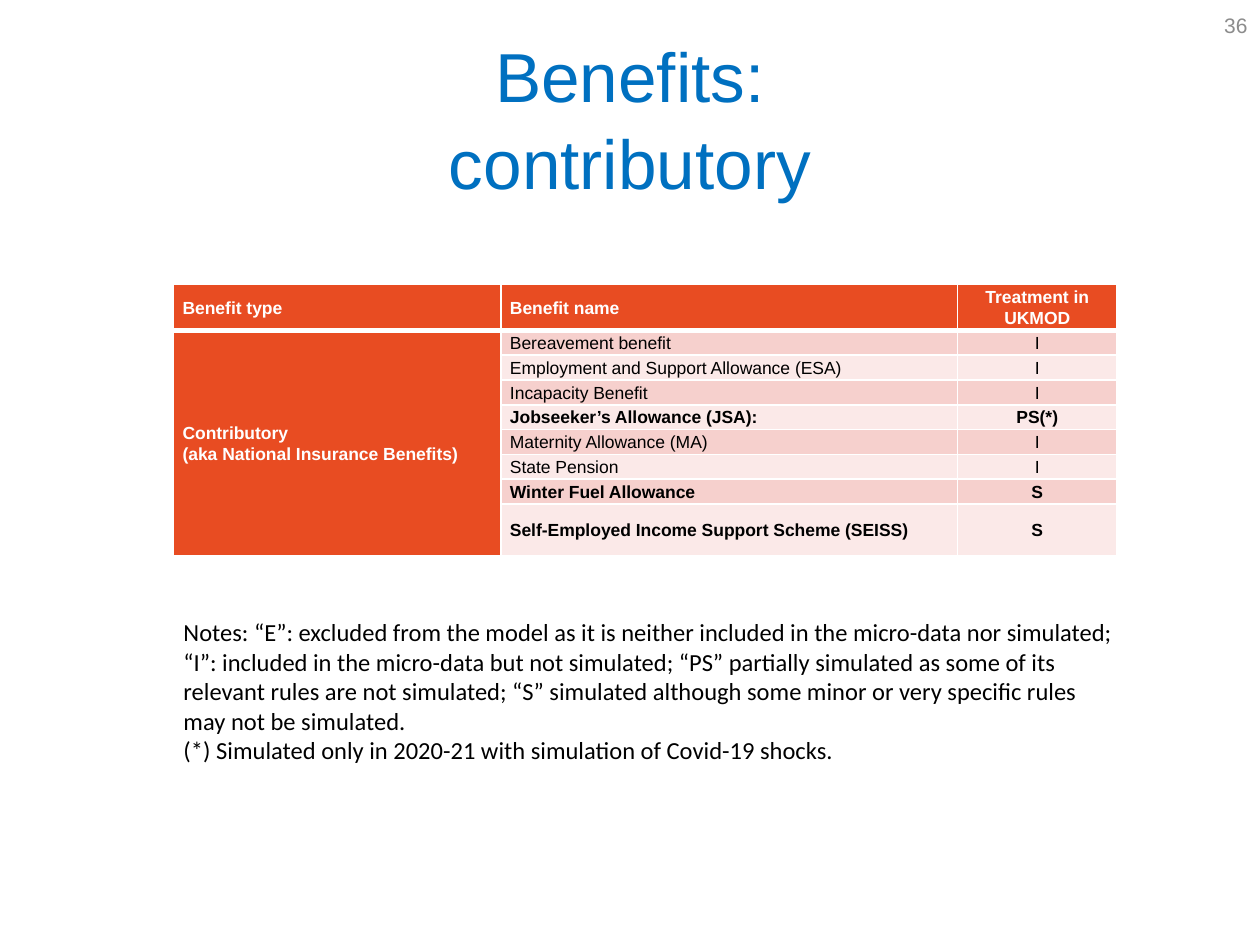
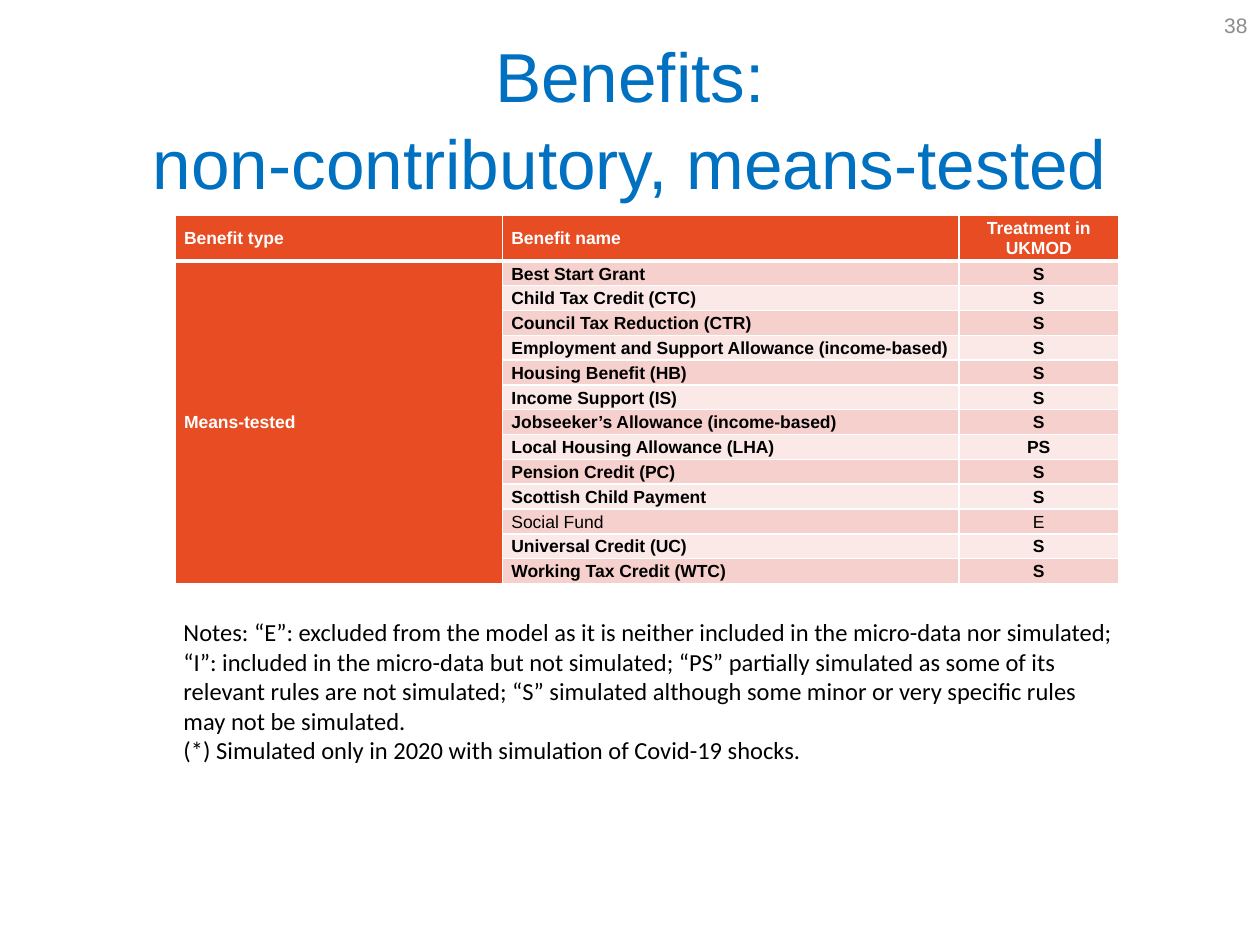
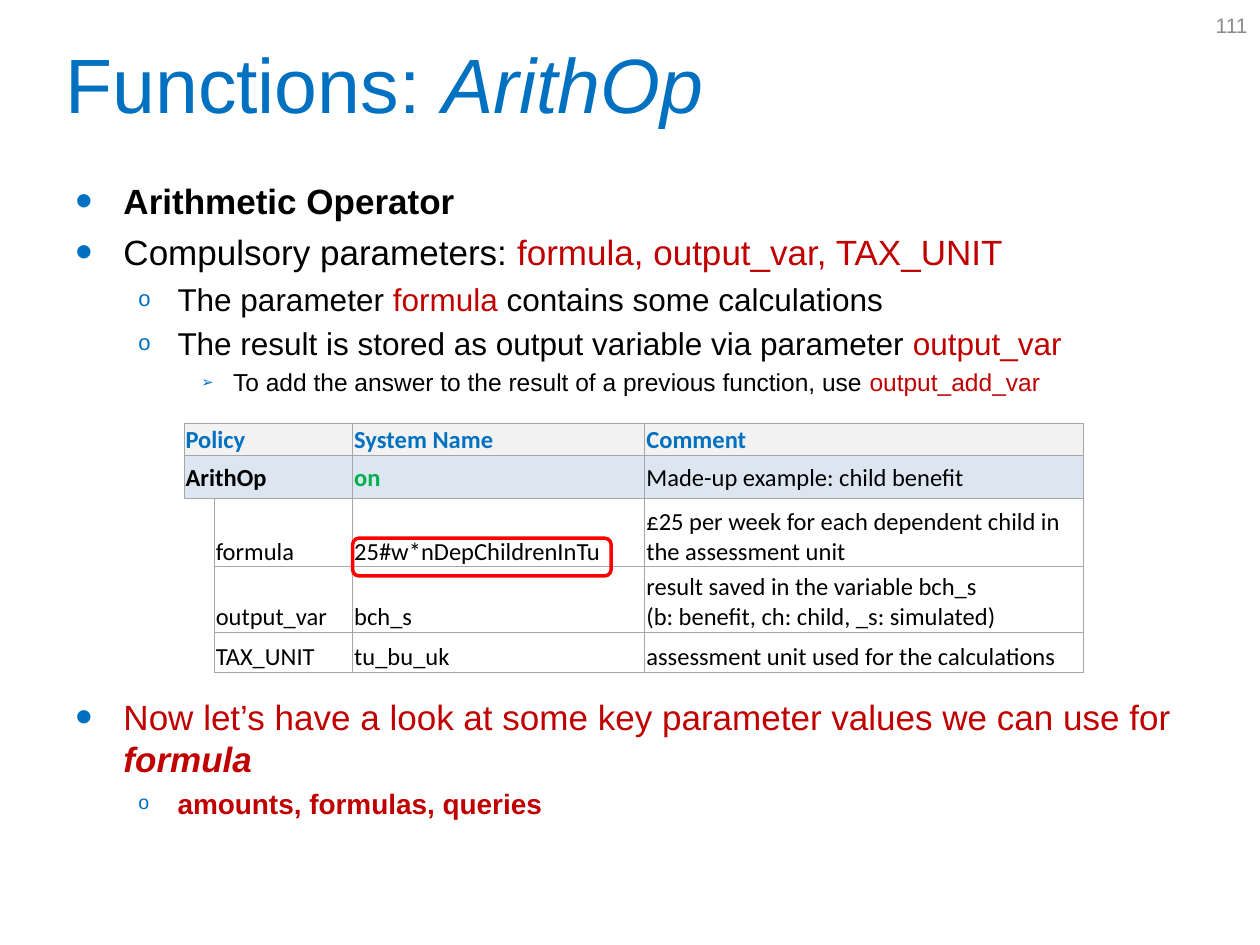
from lxml import etree
from pptx import Presentation
from pptx.dml.color import RGBColor
from pptx.enum.shapes import MSO_SHAPE
from pptx.enum.text import MSO_ANCHOR, MSO_AUTO_SIZE, PP_ALIGN
from pptx.oxml.ns import qn
from pptx.util import Cm, Pt

LEFT, CENTER, RIGHT = PP_ALIGN.LEFT, PP_ALIGN.CENTER, PP_ALIGN.RIGHT
TOP, MIDDLE, BOTTOM = MSO_ANCHOR.TOP, MSO_ANCHOR.MIDDLE, MSO_ANCHOR.BOTTOM
ROUNDED = MSO_SHAPE.ROUNDED_RECTANGLE

BLUE, BLACK, WHITE, GREY = "0070C0", "000000", "FFFFFF", "8C8C8C"
DARK_RED, RED, GREEN = "C00000", "FF0000", "00B050"
ORANGE, PINK, PALE_PINK = "E84C22", "F6D0CD", "FBE9E8"
GRID_GREY, HEADER_GREY, POLICY_BLUE = "A6A6A6", "F2F2F2", "DCE6F1"
HEADING_FONT, NOTE_FONT = "Arial", "Calibri"

# Per outline level: text indent and hanging indent in cm, bullet, bullet size in %
LEVELS = [(0.97, 0.97, "•", 140), (2.06, 0.79, "o", 70), (3.18, 0.64, "➢", 60)]

BENEFIT_HEADER = ["Benefit type", "Benefit name", "Treatment in UKMOD"]
BENEFIT_WIDTHS = [6.6, 9.2, 3.22]
BENEFIT_ROW, BENEFIT_HEADER_ROW, SEISS_ROW = 0.5, 0.93, 1.04
NOTES = (
    "Notes: “E”: excluded from the model as it is neither included in the "
    "micro-data nor simulated; “I”: included in the micro-data but not simulated; "
    "“PS” partially simulated as some of its relevant rules are not simulated; "
    "“S” simulated although some minor or very specific rules may not be simulated."
    "\n(*) Simulated only in {} with simulation of Covid-19 shocks."
)

CONTRIBUTORY = [
    ("Bereavement benefit", "I"),
    ("Employment and Support Allowance (ESA)", "I"),
    ("Incapacity Benefit", "I"),
    ("Jobseeker’s Allowance (JSA):", "PS(*)"),
    ("Maternity Allowance (MA)", "I"),
    ("State Pension", "I"),
    ("Winter Fuel Allowance", "S"),
    ("Self-Employed Income Support Scheme (SEISS)", "S"),
]
MEANS_TESTED = [
    ("Best Start Grant", "S"),
    ("Child Tax Credit (CTC)", "S"),
    ("Council Tax Reduction (CTR)", "S"),
    ("Employment and Support Allowance (income-based)", "S"),
    ("Housing Benefit (HB)", "S"),
    ("Income Support (IS)", "S"),
    ("Jobseeker’s Allowance (income-based)", "S"),
    ("Local Housing Allowance (LHA)", "PS"),
    ("Pension Credit (PC)", "S"),
    ("Scottish Child Payment", "S"),
    ("Social Fund", "E"),
    ("Universal Credit (UC)", "S"),
    ("Working Tax Credit (WTC)", "S"),
]

ARITHOP_WIDTHS = [0.61, 2.79, 5.89, 8.84]
ARITHOP_HEIGHTS = [0.66, 0.86, 1.37, 1.32, 0.81]
PARAMETERS = [
    ("formula", "25#w*nDepChildrenInTu",
     "£25 per week for each dependent child in the assessment unit"),
    ("output_var", "bch_s",
     "result saved in the variable bch_s\n(b: benefit, ch: child, _s: simulated)"),
    ("TAX_UNIT", "tu_bu_uk", "assessment unit used for the calculations"),
]

# Each point: level, size, runs of (text, colour, bold, italic)
POINTS = [
    (0, 20, [("Arithmetic Operator", BLACK, True, False)]),
    (0, 20, [("Compulsory parameters: ", BLACK, False, False),
             ("formula, output_var, TAX_UNIT", DARK_RED, False, False)]),
    (1, 18, [("The parameter ", BLACK, False, False),
             ("formula", DARK_RED, False, False),
             (" contains some calculations", BLACK, False, False)]),
    (1, 18, [("The result is stored as output variable via parameter ", BLACK, False, False),
             ("output_var", DARK_RED, False, False)]),
    (2, 14, [("To add the answer to the result of a previous function, use ", BLACK, False, False),
             ("output_add_var", DARK_RED, False, False)]),
]
NEXT_POINTS = [
    (0, 20, [("Now let’s have a look at some key parameter values we can use for ",
              DARK_RED, False, False),
             ("formula", DARK_RED, True, True)]),
    (1, 16, [("amounts, formulas, queries", DARK_RED, True, False)]),
]


def rgb(color):
    return RGBColor.from_string(color)


def add_text(paragraph, text, size, color, font=HEADING_FONT, bold=False, italic=False):
    """Add one run per line of text, with line breaks between them."""
    for number, line in enumerate(text.split("\n")):
        if number:
            paragraph.add_line_break()
        run = paragraph.add_run()
        run.text = line
        run.font.name, run.font.size = font, Pt(size)
        run.font.bold, run.font.italic = bold, italic
        run.font.color.rgb = rgb(color)


def add_box(slide, left, top, width, height, anchor=TOP, align=LEFT):
    """Add a wrapping text box and return its text frame."""
    frame = slide.shapes.add_textbox(Cm(left), Cm(top), Cm(width), Cm(height)).text_frame
    frame.word_wrap = True
    frame.vertical_anchor = anchor
    frame.paragraphs[0].alignment = align
    return frame


def add_title(slide, left, top, size, align, runs):
    heading = add_box(slide, left, top, 22.86, 3.18, MIDDLE, align).paragraphs[0]
    heading.line_spacing = 1.04
    for text, italic in runs:
        add_text(heading, text, size, BLUE, italic=italic)


def add_page_number(slide, number):
    frame = add_box(slide, 19.48, 0, 5.92, 1.02, MIDDLE, RIGHT)
    add_text(frame.paragraphs[0], str(number), 12, GREY)


def add_bullets(slide, top, height, points):
    frame = add_box(slide, 1.27, top, 22.86, height)
    for number, (level, size, runs) in enumerate(points):
        point = frame.add_paragraph() if number else frame.paragraphs[0]
        indent, hanging, bullet, bullet_size = LEVELS[level]
        point.level = level
        properties = point._p.get_or_add_pPr()
        properties.set("marL", str(Cm(indent)))
        properties.set("indent", str(-Cm(hanging)))
        bullet_color = etree.SubElement(properties, qn("a:buClr"))
        etree.SubElement(bullet_color, qn("a:srgbClr"), val=BLUE)
        etree.SubElement(properties, qn("a:buSzPct"), val=str(bullet_size * 1000))
        etree.SubElement(properties, qn("a:buFont"), typeface=HEADING_FONT)
        etree.SubElement(properties, qn("a:buChar"), char=bullet)
        if number:
            point.space_before = Pt(round(size * 0.24))
        for text, color, bold, italic in runs:
            add_text(point, text, size, color, bold=bold, italic=italic)


def set_borders(cell, color, widths):
    """Draw the sides named in widths (L, R, T, B, in points) and clear the others."""
    properties = cell._tc.get_or_add_tcPr()
    for side in "LRTB":
        line = etree.SubElement(properties, qn(f"a:ln{side}"))
        if side in widths:
            line.set("w", str(Pt(widths[side])))
            fill = etree.SubElement(line, qn("a:solidFill"))
            etree.SubElement(fill, qn("a:srgbClr"), val=color)
        else:
            etree.SubElement(line, qn("a:noFill"))


def style_cell(cell, fill, border, widths, anchor, margins):
    set_borders(cell, border, widths)
    cell.fill.solid()
    cell.fill.fore_color.rgb = rgb(fill)
    cell.vertical_anchor = anchor
    side, top = margins
    cell.margin_left = cell.margin_right = Cm(side)
    cell.margin_top, cell.margin_bottom = Cm(top), 0


def add_grid(slide, left, top, widths, heights):
    """Add an unbanded table with the given column widths and row heights."""
    table = slide.shapes.add_table(len(heights), len(widths), Cm(left), Cm(top),
                                   Cm(sum(widths)), Cm(sum(heights))).table
    table.horz_banding = False
    for column, width in zip(table.columns, widths):
        column.width = Cm(width)
    for row, height in zip(table.rows, heights):
        row.height = Cm(height)
    return table


def add_benefit_table(slide, left, top, benefit_type, benefits, heights):
    table = add_grid(slide, left, top, BENEFIT_WIDTHS, heights)
    rows = [BENEFIT_HEADER] + [("", *benefit) for benefit in benefits]
    rows[1] = (benefit_type, *benefits[0])
    for r, texts in enumerate(rows):
        simulated = "S" in texts[2]
        for c, text in enumerate(texts):
            cell = table.cell(r, c)
            heading = r == 0 or c == 0
            fill = ORANGE if heading else PINK if r % 2 else PALE_PINK
            edges = dict(L=1, R=1, T=1 if r != 1 else 3, B=1 if r else 3)
            style_cell(cell, fill, WHITE, edges, MIDDLE, (0.18, 0))
            if text:
                paragraph = cell.text_frame.paragraphs[0]
                paragraph.alignment = CENTER if c == 2 else LEFT
                paragraph.line_spacing = 1.07
                add_text(paragraph, text, 10, WHITE if heading else BLACK,
                         bold=heading or simulated)
    table.cell(1, 0).merge(table.cell(len(benefits), 0))


def add_benefit_slide(slide, number, title, years):
    add_title(slide, 1.27, 0.76, 39.6, CENTER, [(title, False)])
    add_page_number(slide, number)
    notes = add_box(slide, 3.45, 12.32, 19.28, 3.25)
    notes.auto_size = MSO_AUTO_SIZE.SHAPE_TO_FIT_TEXT
    add_text(notes.paragraphs[0], NOTES.format(years), 14, BLACK, NOTE_FONT)


def add_arithop_table(slide):
    table = add_grid(slide, 3.71, 8.53, ARITHOP_WIDTHS, ARITHOP_HEIGHTS)
    rows = [("Policy", "", "System Name", "Comment"),
            ("ArithOp", "", "on", "Made-up example: child benefit")]
    rows += [("", *parameter) for parameter in PARAMETERS]
    colors = {"on": GREEN, **dict.fromkeys(rows[0], BLUE)}
    fills = [HEADER_GREY, POLICY_BLUE] + [WHITE] * len(PARAMETERS)
    for r, texts in enumerate(rows):
        for c, text in enumerate(texts):
            cell = table.cell(r, c)
            sides = "LRTB"
            if r > 1 and c == 0:
                sides = "RT" if r == 2 else "R"
            style_cell(cell, fills[r], GRID_GREY, dict.fromkeys(sides, 0.5),
                       MIDDLE if r < 2 else BOTTOM, (0.03, 0.03))
            if text:
                bold = r == 0 or (r == 1 and c < 3)
                add_text(cell.text_frame.paragraphs[0], text, 14,
                         colors.get(text, BLACK), NOTE_FONT, bold)
    for r in range(2):
        table.cell(r, 0).merge(table.cell(r, 1))


def add_highlight(slide, left, top, width, height):
    outline = slide.shapes.add_shape(ROUNDED, Cm(left), Cm(top), Cm(width), Cm(height))
    outline.shadow.inherit = False
    outline.fill.background()
    outline.line.color.rgb = rgb(RED)
    outline.line.width = Pt(2)


def main():
    deck = Presentation()
    deck.slide_width, deck.slide_height = Cm(25.4), Cm(19.05)
    contributory, means_tested, arithop = (
        deck.slides.add_slide(deck.slide_layouts[6]) for _ in range(3))

    add_benefit_slide(contributory, 36, "Benefits:\ncontributory", "2020-21")
    heights = [BENEFIT_HEADER_ROW] + [BENEFIT_ROW] * (len(CONTRIBUTORY) - 1) + [SEISS_ROW]
    add_benefit_table(contributory, 3.5, 5.73,
                      "Contributory\n(aka National Insurance Benefits)",
                      CONTRIBUTORY, heights)

    add_benefit_slide(means_tested, 38, "Benefits:\nnon-contributory, means-tested", "2020")
    heights = [BENEFIT_HEADER_ROW] + [BENEFIT_ROW] * len(MEANS_TESTED)
    add_benefit_table(means_tested, 3.53, 4.33, "Means-tested", MEANS_TESTED, heights)

    add_bullets(arithop, 3.5, 4.8, POINTS)
    add_arithop_table(arithop)
    add_title(arithop, 1.07, 0.05, 44, LEFT, [("Functions: ", False), ("ArithOp", True)])
    add_page_number(arithop, 111)
    add_highlight(arithop, 7.11, 10.85, 5.21, 0.76)
    add_bullets(arithop, 13.89, 2.9, NEXT_POINTS)

    deck.save("out.pptx")


if __name__ == "__main__":
    main()
